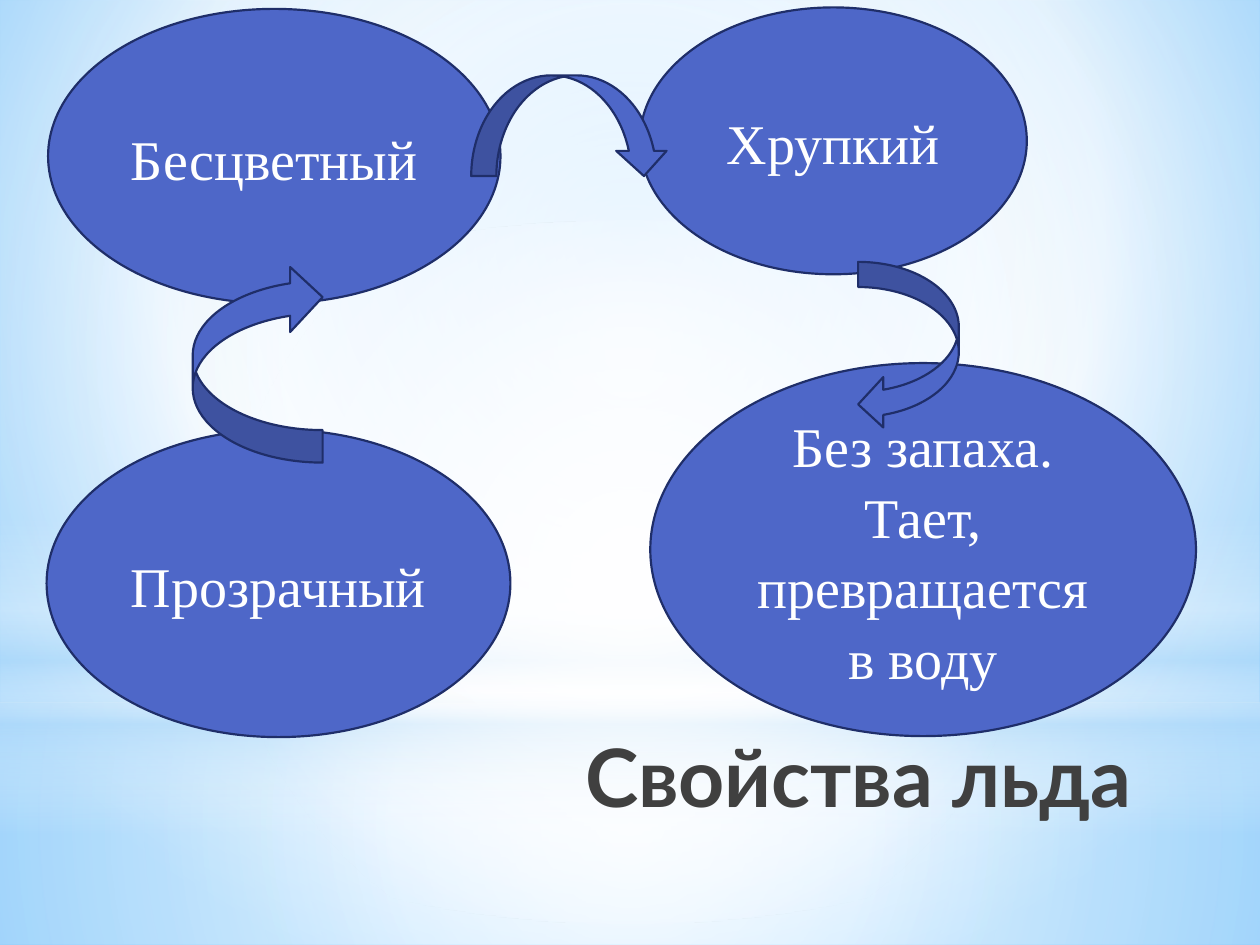
import pptx
import pptx.dml.color
import pptx.enum.shapes
import pptx.enum.text
import pptx.oxml
import pptx.oxml.ns
import pptx.util

Cm = pptx.util.Cm
Pt = pptx.util.Pt
SHAPES = pptx.enum.shapes.MSO_SHAPE
ALIGN = pptx.enum.text.PP_ALIGN
ANCHOR = pptx.enum.text.MSO_ANCHOR
CENTRE = (50, 50, 50, 50)


def color(value):
    return pptx.dml.color.RGBColor.from_string(value)


def gradient_xml(stops, focus=None, angle=90):
    stop_xml = "".join(
        f'<a:gs pos="{position * 1000}"><a:srgbClr val="{value}">'
        f'<a:alpha val="{alpha * 1000}"/></a:srgbClr></a:gs>'
        for position, value, alpha in stops
    )
    if focus:
        sides = " ".join(f'{side}="{share * 1000}"' for side, share in zip("ltrb", focus))
        direction = f'<a:path path="circle"><a:fillToRect {sides}/></a:path>'
    else:
        direction = f'<a:lin ang="{angle * 60000}" scaled="0"/>'
    namespace = pptx.oxml.ns.nsdecls("a")
    return f'<a:gradFill {namespace} rotWithShape="1"><a:gsLst>{stop_xml}</a:gsLst>{direction}</a:gradFill>'


class IceSlide:
    """Holds the style and the current slide, and draws each kind of element."""

    fill = "4E67C8"
    outline = "1F2E69"
    body_font = "Times New Roman"
    title_font = "Lato"

    def __init__(self, presentation):
        self.slide = presentation.slides.add_slide(presentation.slide_layouts[6])

    def apply_gradient(self, fill, properties, stops, focus):
        fill.solid()
        solid = properties.find(pptx.oxml.ns.qn("a:solidFill"))
        properties.replace(solid, pptx.oxml.parse_xml(gradient_xml(stops, focus)))

    def background(self, stops, focus):
        fill = self.slide.background.fill
        fill.solid()
        properties = self.slide._element.find(".//" + pptx.oxml.ns.qn("p:bgPr"))
        self.apply_gradient(fill, properties, stops, focus)

    def shape(self, kind, box):
        shape = self.slide.shapes.add_shape(kind, *map(Cm, box))
        shape.shadow.inherit = False
        return shape

    def glow(self, kind, box, stops, focus=None):
        shape = self.shape(kind, box)
        shape.line.fill.background()
        self.apply_gradient(shape.fill, shape._element.spPr, stops, focus)

    def outlined(self, kind, box):
        shape = self.shape(kind, box)
        shape.fill.solid()
        shape.fill.fore_color.rgb = color(self.fill)
        shape.line.color.rgb = color(self.outline)
        shape.line.width = Pt(1.25)
        return shape

    def label(self, shape, text, font, size, value, align, anchor, bold=False):
        text_frame = shape.text_frame
        text_frame.word_wrap = True
        text_frame.vertical_anchor = anchor
        text_frame.text = text
        paragraph = text_frame.paragraphs[0]
        paragraph.alignment = align
        run = paragraph.runs[0]
        run.font.name = font
        run.font.size = Pt(size)
        run.font.bold = bold
        run.font.color.rgb = color(value)
        return paragraph

    def property_bubble(self, text, box):
        shape = self.outlined(SHAPES.OVAL, box)
        paragraph = self.label(shape, text, self.body_font, 32, "FFFFFF", ALIGN.CENTER, ANCHOR.MIDDLE)
        paragraph.line_spacing = 1.05

    def arrow(self, kind, box, rotation=0):
        self.outlined(kind, box).rotation = rotation

    def title(self, text, box):
        shape = self.slide.shapes.add_textbox(*map(Cm, box))
        self.label(shape, text, self.title_font, 46, "404040", ALIGN.RIGHT, ANCHOR.TOP, True)


def main():
    presentation = pptx.Presentation()
    presentation.slide_width = Cm(25.4)
    presentation.slide_height = Cm(19.05)
    ice = IceSlide(presentation)

    ice.background([(0, "9ED5FF", 100), (60, "FFFFFF", 100), (100, "5BB9FF", 100)], (20, 10, 20, 60))
    ice.glow(SHAPES.RECTANGLE, (0, 14.17, 25.4, 4.88),
             [(0, "FFFFFF", 91), (37, "FFFFFF", 76), (100, "B4DCFA", 79)], CENTRE)
    ice.glow(SHAPES.RECTANGLE, (0, 0, 25.4, 14.17),
             [(0, "FFFFFF", 89), (48, "FFFFFF", 62), (100, "B4DCFA", 79)], CENTRE)
    ice.glow(SHAPES.RECTANGLE, (0, 10.46, 25.4, 6.35),
             [(0, "FFFFFF", 0), (29, "FFFFFF", 30), (45, "B4DCFA", 40),
              (55, "FFFFFF", 26), (65, "B4DCFA", 60), (100, "FFFFFF", 0)])
    ice.glow(SHAPES.OVAL, (0, 4.45, 25.4, 14.17), [(0, "FFFFFF", 100), (56, "FFFFFF", 0)], CENTRE)

    ice.title("Свойства льда", (4.98, 14.53, 18.08, 0.79))

    ice.property_bubble("Прозрачный", (0.94, 8.66, 9.35, 6.2))
    ice.property_bubble("Бесцветный", (0.97, 0.18, 9.12, 5.94))
    ice.property_bubble("Хрупкий", (12.9, 0.15, 7.8, 5.38))
    ice.property_bubble("Без запаха. Тает, превращается в воду", (13.11, 7.32, 11, 7.52))

    ice.arrow(SHAPES.CURVED_LEFT_ARROW, (17.3, 5.28, 2.03, 3.38))
    ice.arrow(SHAPES.CURVED_DOWN_ARROW, (9.5, 1.52, 3.99, 2.03))
    ice.arrow(SHAPES.CURVED_DOWN_ARROW, (3.2, 6.02, 3.99, 2.62), 270)

    presentation.save("out.pptx")


if __name__ == "__main__":
    main()
